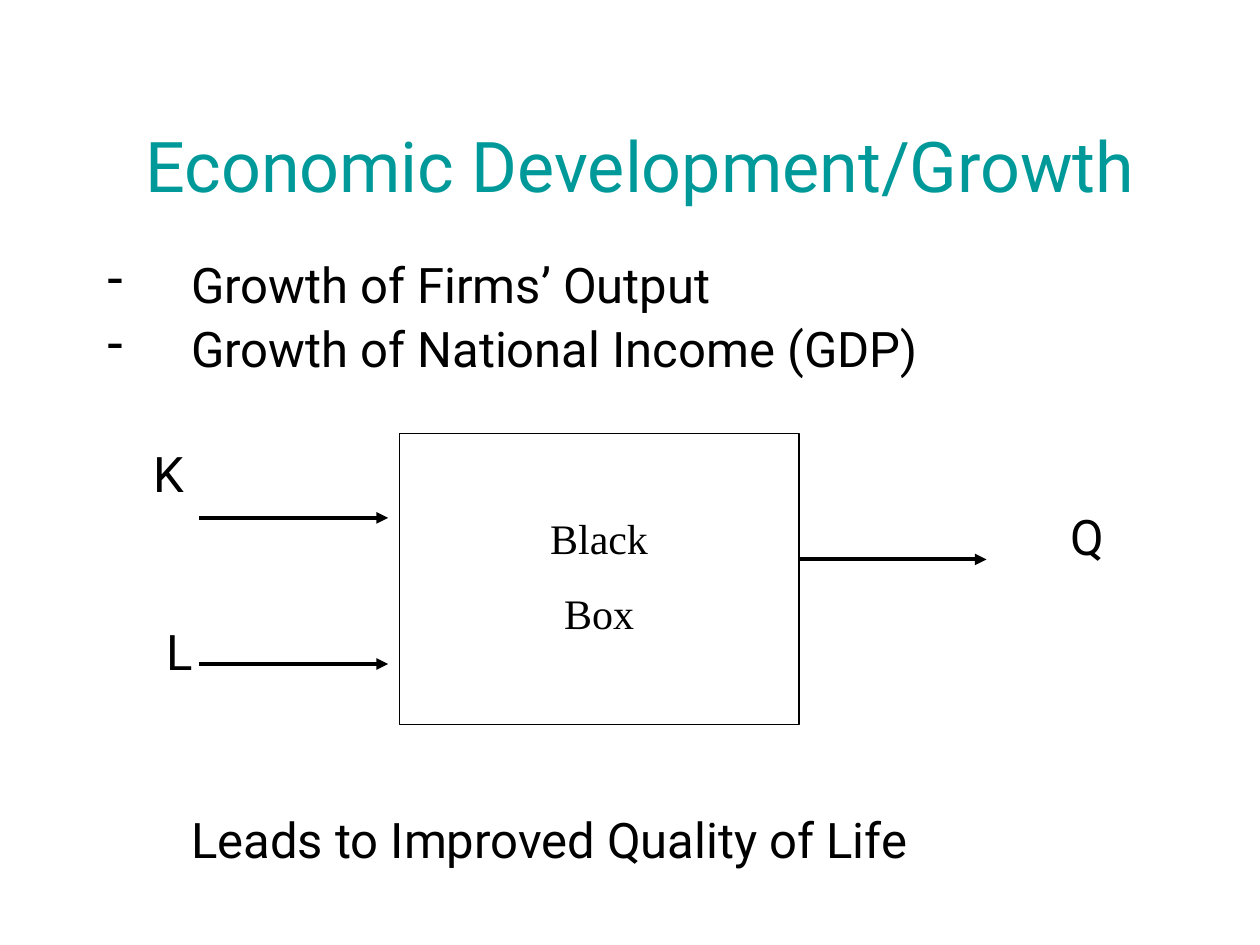
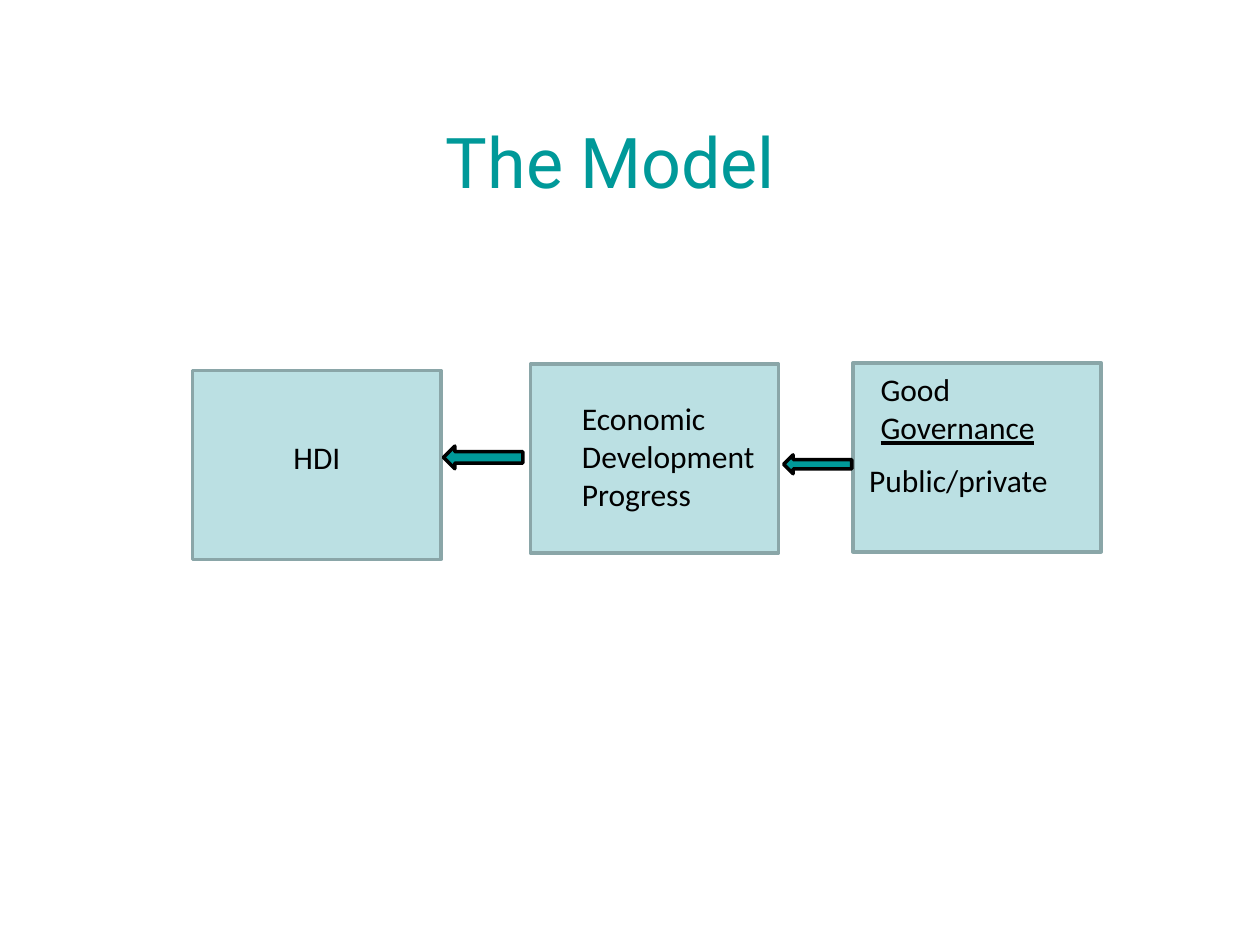
from lxml import etree
from pptx import Presentation
from pptx.dml.color import RGBColor
from pptx.enum import shapes, text
from pptx.oxml.ns import qn
from pptx.util import Inches, Pt

COLORS = {"title": "009999", "ink": "000000", "white": "FFFFFF",
          "box": "BBE0E3", "box_edge": "8AA6A8", "arrow": "009999"}
HEAD, LABEL, SERIF = "Roboto", "Calibri", "Times New Roman"

GROWTH_TITLE = ("Economic Development/Growth", (0.83, 0.68, 8.5, 1.25))
GROWTH_POINTS = ["Growth of Firms’ Output", "Growth of National Income (GDP)"]
GROWTH_LABELS = [
    ("K", (1.12, 3.52, 0.6, 0.5)),
    ("Q", (8.4, 4.02, 0.6, 0.5)),
    ("L", (1.22, 4.94, 0.6, 0.5)),
    ("Leads to Improved Quality of Life", (1.42, 6.43, 7, 0.5)),
]
BLACK_BOX = (["Black", "Box"], (3.17, 3.44, 3.17, 2.31))
FLOW_LENGTH = 1.5
FLOWS = [(1.58, 4.11), (1.58, 5.27), (6.33, 4.44)]

MODEL_TITLE = ("The Model", (1.46, 0.65, 6.77, 1.25))
STAGE_SIZE = (1.97, 1.5)
STAGES = [(1.53, 2.94), (4.21, 2.89), (6.77, 2.88)]
STAGE_LABELS = [
    (["HDI"], (1.77, 3.43, 1.49, 0.4), text.PP_ALIGN.CENTER),
    (["Economic Development Progress"], (4.52, 3.12, 1.58, 1.01), text.PP_ALIGN.LEFT),
    (["Good ", "Governance"], (6.89, 2.89, 1.73, 0.71), text.PP_ALIGN.LEFT),
    (["Public/private"], (6.8, 3.61, 1.65, 0.4), text.PP_ALIGN.LEFT),
]
UNDERLINED = "Governance"
STAGE_ARROWS = [(3.52, 3.54, 0.63, 0.18), (6.22, 3.61, 0.54, 0.15)]


def rgb(name):
    return RGBColor.from_string(COLORS[name])


def place(at):
    return [Inches(v) for v in at]


def style(paragraph, font, size, color="ink", align=text.PP_ALIGN.LEFT):
    paragraph.alignment = align
    for run in paragraph.runs:
        run.font.name = font
        run.font.size = Pt(size)
        run.font.color.rgb = rgb(color)


def add_frame(slide, at):
    frame = slide.shapes.add_textbox(*place(at)).text_frame
    frame.word_wrap = True
    return frame


def add_title(slide, wording, at):
    frame = add_frame(slide, at)
    frame.vertical_anchor = text.MSO_ANCHOR.MIDDLE
    frame.text = wording
    style(frame.paragraphs[0], HEAD, 40, "title", text.PP_ALIGN.CENTER)


def add_box(slide, kind, at, fill, line, width):
    box = slide.shapes.add_shape(kind, *place(at))
    box.shadow.inherit = False
    if fill:
        box.fill.solid()
        box.fill.fore_color.rgb = rgb(fill)
    else:
        box.fill.background()
    box.line.color.rgb = rgb(line)
    box.line.width = Pt(width)
    return box


def add_flow(slide, left, top):
    flow = slide.shapes.add_connector(shapes.MSO_CONNECTOR.STRAIGHT,
                                      *place((left, top, left + FLOW_LENGTH, top)))
    flow.line.color.rgb = rgb("ink")
    flow.line.width = Pt(2.25)
    etree.SubElement(flow.line._get_or_add_ln(), qn("a:tailEnd"), type="triangle")
    etree.SubElement(flow._element.spPr, qn("a:effectLst"))


def add_dash(paragraph):
    props = paragraph._p.get_or_add_pPr()
    indent = Inches(0.67)
    props.set("marL", str(indent))
    props.set("indent", str(-indent))
    etree.SubElement(props, qn("a:buChar"), char="-")


def build_growth(slide):
    add_title(slide, *GROWTH_TITLE)
    points = add_frame(slide, (0.75, 2.02, 8.5, 1.1))
    points.text = "\n".join(GROWTH_POINTS)
    for index, point in enumerate(points.paragraphs):
        add_dash(point)
        point.line_spacing = 0.9
        if index:
            point.space_before = Pt(6.5)
        style(point, HEAD, 28)
    for wording, at in GROWTH_LABELS:
        label = add_frame(slide, at)
        label.text = wording
        label.paragraphs[0].line_spacing = 0.9
        style(label.paragraphs[0], HEAD, 28)

    words, at = BLACK_BOX
    frame = add_box(slide, shapes.MSO_SHAPE.RECTANGLE, at, None, "ink", 1).text_frame
    frame.vertical_anchor = text.MSO_ANCHOR.MIDDLE
    frame.margin_bottom = Inches(0.11)
    frame.text = "\n".join(words)
    for index, word in enumerate(frame.paragraphs):
        if index:
            word.space_before = Pt(13.5)
        style(word, SERIF, 24, align=text.PP_ALIGN.CENTER)
    for start in FLOWS:
        add_flow(slide, *start)


def build_model(slide):
    add_title(slide, *MODEL_TITLE)
    for corner in STAGES:
        add_box(slide, shapes.MSO_SHAPE.RECTANGLE, corner + STAGE_SIZE, "box", "box_edge", 2)
    for parts, at, align in STAGE_LABELS:
        label = add_frame(slide, at).paragraphs[0]
        for part in parts:
            run = label.add_run()
            run.text = part
            if part == UNDERLINED:
                run.font.underline = True
        style(label, LABEL, 18, align=align)
    for at in STAGE_ARROWS:
        add_box(slide, shapes.MSO_SHAPE.LEFT_ARROW, at, "arrow", "ink", 2)


def main():
    deck = Presentation()
    deck.slide_width, deck.slide_height = Inches(10), Inches(7.5)
    for build in (build_growth, build_model):
        slide = deck.slides.add_slide(deck.slide_layouts[6])
        slide.background.fill.solid()
        slide.background.fill.fore_color.rgb = rgb("white")
        build(slide)
    deck.save("out.pptx")


if __name__ == "__main__":
    main()
